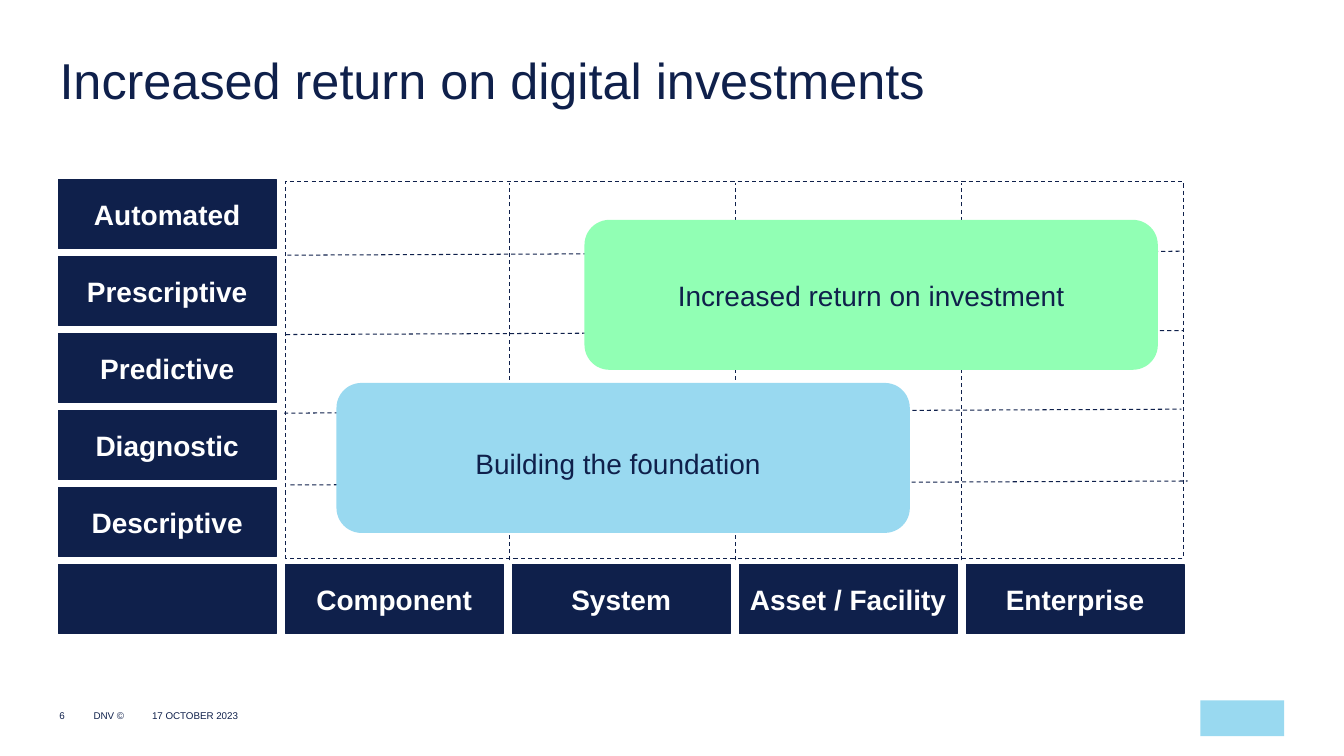
from pptx import Presentation
from pptx import util as u
from pptx.dml.color import RGBColor
from pptx.enum import dml, shapes, text
from pptx.oxml.ns import qn
from lxml import etree

COLORS = {"navy": "0F204B", "white": "FFFFFF", "sky": "99D9F0", "mint": "91FFB4"}
TITLE = "Increased return on digital investments"
LEVELS = ["Automated", "Prescriptive", "Predictive", "Diagnostic", "Descriptive"]
SCOPES = ["", "Component", "System", "Asset / Facility", "Enterprise"]
PHASES = [
    ("Building the foundation", 8.48, 9.65, "sky", 0.25),
    ("Increased return on investment", 14.73, 5.54, "mint", 0),
]
FOOTER = [
    ("6", 1.5, 0.74, text.PP_ALIGN.LEFT),
    ("DNV ©", 2.36, 0.79, text.PP_ALIGN.LEFT),
    ("17 OCTOBER 2023", 3.25, 3.33, text.PP_ALIGN.CENTER),
]
LEFT, TOP = 1.47, 4.52
CELL_WIDTH, CELL_HEIGHT = 5.49, 1.75
COLUMN_STEP, ROW_STEP = 5.72, 1.94
FRAME = (7.19, 4.57, 22.63, 9.5)
ROW_LINE_STARTS = [(7.24, 6.43), (7.21, 8.43), (7.16, 10.41), (7.32, 12.22)]
ROW_LINE_WIDTH, ROW_LINE_RISE = 22.61, 0.1
COLUMN_LINE_LEFT, COLUMN_LINE_STEP = 12.83, 5.7
COLUMN_LINE_TOP, COLUMN_LINE_BOTTOM = 4.6, 14.12


def color(name):
    return RGBColor.from_string(COLORS[name])


def cm(*lengths):
    return [u.Cm(length) for length in lengths]


def write(shape, words, size, ink, align, anchor, bold=False):
    frame = shape.text_frame
    frame.text = words
    frame.word_wrap = True
    frame.vertical_anchor = anchor
    frame.margin_left = frame.margin_right = frame.margin_top = frame.margin_bottom = 0
    para = frame.paragraphs[0]
    para.alignment = align
    para.font.name = "Arial"
    para.font.size = u.Pt(size)
    para.font.bold = bold
    para.font.color.rgb = color(ink)
    return frame


def add_box(page, kind, place, fill=None):
    box = page.shapes.add_shape(kind, *cm(*place))
    box.shadow.inherit = False
    box.line.fill.background()
    if fill:
        box.fill.solid()
        box.fill.fore_color.rgb = color(fill)
    else:
        box.fill.background()
    return box


def outline(shape, dashed=False):
    shape.line.color.rgb = color("navy")
    shape.line.width = u.Pt(0.75)
    if dashed:
        shape.line.dash_style = dml.MSO_LINE.DASH


def add_grid_line(page, *ends):
    line = page.shapes.add_connector(shapes.MSO_CONNECTOR.STRAIGHT, *cm(*ends))
    outline(line, dashed=True)
    etree.SubElement(line.element.spPr, qn("a:effectLst"))


def add_title(page):
    title = page.shapes.title
    title.left, title.top, title.width, title.height = cm(1.5, 1.5, 30.86, 2.59)
    frame = write(title, TITLE, 36, "navy", text.PP_ALIGN.LEFT, text.MSO_ANCHOR.TOP)
    frame.auto_size = text.MSO_AUTO_SIZE.NONE
    frame.paragraphs[0].line_spacing = 0.83


def add_axes(page):
    cells = [(label, 0, row) for row, label in enumerate(LEVELS)]
    cells += [(label, column, len(LEVELS)) for column, label in enumerate(SCOPES)]
    for label, column, row in cells:
        place = (LEFT + column * COLUMN_STEP, TOP + row * ROW_STEP, CELL_WIDTH, CELL_HEIGHT)
        cell = add_box(page, shapes.MSO_SHAPE.RECTANGLE, place, "navy")
        outline(cell)
        if label:
            write(cell, label, 20, "white", text.PP_ALIGN.CENTER, text.MSO_ANCHOR.MIDDLE, True)


def add_grid(page):
    outline(add_box(page, shapes.MSO_SHAPE.RECTANGLE, FRAME), dashed=True)
    for x, y in ROW_LINE_STARTS:
        add_grid_line(page, x, y, x + ROW_LINE_WIDTH, y - ROW_LINE_RISE)
    for index in range(len(SCOPES) - 2):
        x = COLUMN_LINE_LEFT + index * COLUMN_LINE_STEP
        add_grid_line(page, x, COLUMN_LINE_BOTTOM, x, COLUMN_LINE_TOP)


def add_phases(page):
    for label, x, y, fill, inset in PHASES:
        phase = add_box(page, shapes.MSO_SHAPE.ROUNDED_RECTANGLE, (x, y, 14.45, 3.78), fill)
        frame = write(phase, label, 20, "navy", text.PP_ALIGN.CENTER, text.MSO_ANCHOR.MIDDLE)
        frame.margin_top = frame.margin_right = u.Cm(inset)


def add_footer(page):
    for words, x, width, align in FOOTER:
        box = page.shapes.add_textbox(*cm(x, 17.88, width, 0.43))
        write(box, words, 7, "navy", align, text.MSO_ANCHOR.TOP)
    add_box(page, shapes.MSO_SHAPE.RECTANGLE, (30.25, 17.65, 2.11, 0.9), "sky")


def main():
    deck = Presentation()
    deck.slide_width, deck.slide_height = cm(33.87, 19.05)
    page = deck.slides.add_slide(deck.slide_layouts[5])
    add_title(page)
    add_axes(page)
    add_grid(page)
    add_phases(page)
    add_footer(page)
    deck.save("out.pptx")


if __name__ == "__main__":
    main()
